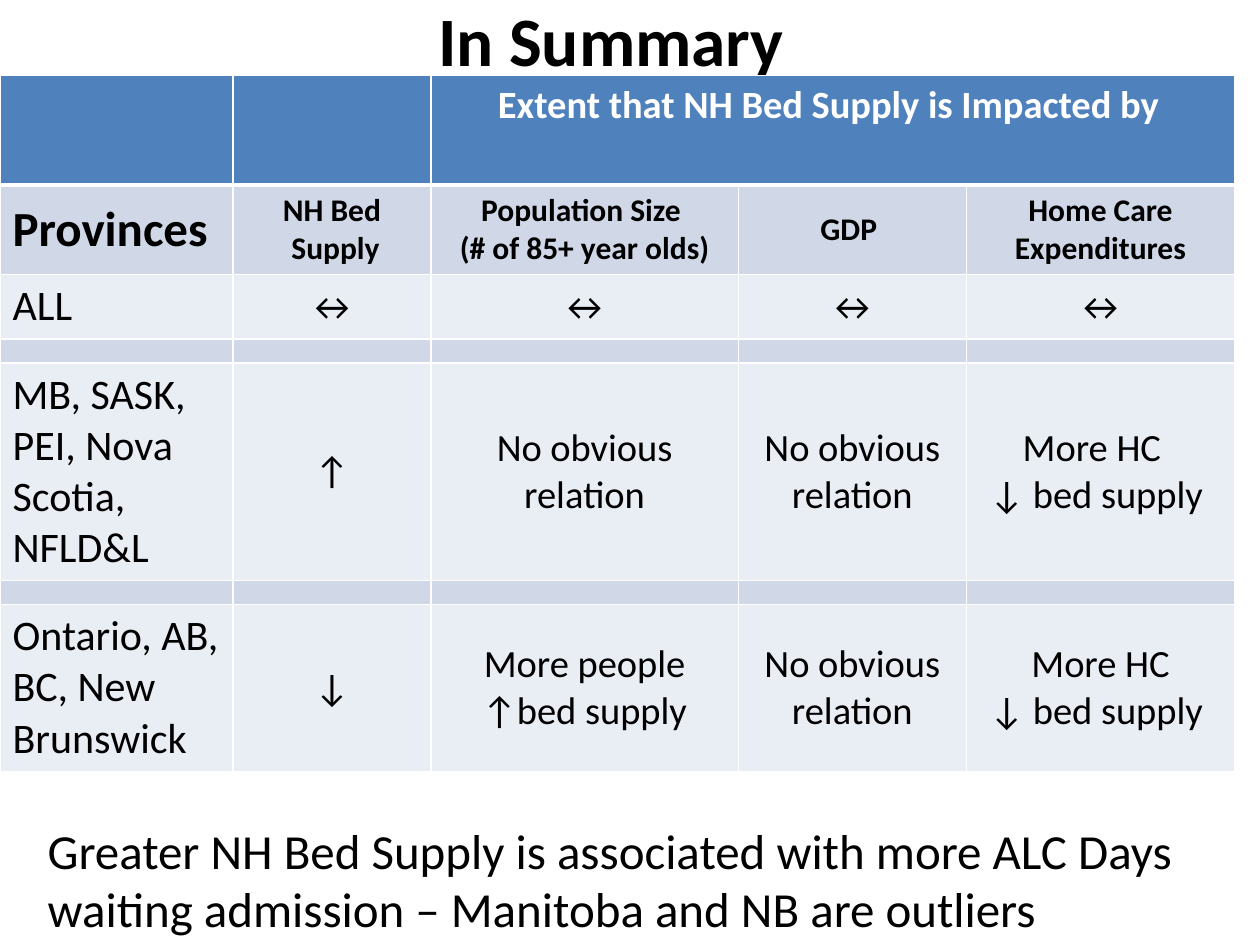
"""Build the nursing home bed supply summary slide."""
from lxml.etree import SubElement
from pptx import Presentation
from pptx.dml.color import RGBColor
from pptx.enum.text import MSO_ANCHOR as Anchor, PP_ALIGN as Align
from pptx.oxml.ns import qn
from pptx.util import Inches, Pt

FONT = "Calibri"
BLACK = RGBColor(0x00, 0x00, 0x00)
WHITE = RGBColor(0xFF, 0xFF, 0xFF)
HEADER_BLUE = RGBColor(0x4F, 0x81, 0xBD)
BAND_DARK = RGBColor(0xD0, 0xD8, 0xE8)
BAND_LIGHT = RGBColor(0xE9, 0xED, 0xF4)

TITLE = "In Summary"
CONCLUSION = ("Greater NH Bed Supply is associated with more ALC Days "
              "waiting admission – Manitoba and NB are outliers")
NO_RELATION = "No obvious\nrelation"
SPACER = [""] * 5
ROWS = [
    ["", "", "Extent that NH Bed Supply is Impacted by ", "", ""],
    ["Provinces", "NH Bed\n Supply", "Population Size \n(# of 85+ year olds)",
     "GDP ", "Home Care Expenditures"],
    ["ALL"] + ["↔"] * 4,
    SPACER,
    ["MB, SASK, PEI, Nova Scotia, NFLD&L", "↑", NO_RELATION, NO_RELATION,
     "More HC  \n↓ bed supply "],
    SPACER,
    ["Ontario, AB, BC, New Brunswick", "↓", "More people\n↑bed supply",
     NO_RELATION, "More HC\n↓ bed supply "],
]
COLUMN_WIDTHS = [1.85, 1.57, 2.44, 1.81, 2.13]
ROW_HEIGHTS = [0.87, 0.71, 0.51, 0.19, 1.72, 0.19, 1.33]
HEADER_SIZES = {0: (22, 22), 1: (28, 18)}
BODY_SIZES = (24, 22)
SPACER_SIZE = 5


def write_text(frame, text, size, color=BLACK, bold=False, align=Align.LEFT):
    for index, line in enumerate(text.split("\n")):
        paragraph = frame.add_paragraph() if index else frame.paragraphs[0]
        paragraph.alignment = align
        run = paragraph.add_run()
        run.text = line
        run.font.name = FONT
        run.font.size = Pt(size)
        run.font.bold = bold
        run.font.color.rgb = color


def set_borders(cell, bottom_width):
    properties = cell._tc.get_or_add_tcPr()
    for side, width in (("L", 1), ("R", 1), ("T", 1), ("B", bottom_width)):
        line = SubElement(properties, qn(f"a:ln{side}"), w=str(Pt(width)))
        fill = SubElement(line, qn("a:solidFill"))
        SubElement(fill, qn("a:srgbClr"), val=str(WHITE))


def fill_cell(cell, text, row, column):
    is_header = row == 0
    set_borders(cell, 3 if is_header else 1)
    cell.fill.solid()
    band = BAND_DARK if row % 2 else BAND_LIGHT
    cell.fill.fore_color.rgb = HEADER_BLUE if is_header else band
    first_size, other_size = HEADER_SIZES.get(row, BODY_SIZES)
    if text:
        is_label = column == 0
        top = is_header or (is_label and row > 1)
        cell.vertical_anchor = Anchor.TOP if top else Anchor.MIDDLE
        write_text(cell.text_frame, text, first_size if is_label else other_size,
                   WHITE if is_header else BLACK, row < 2,
                   Align.LEFT if is_label else Align.CENTER)
    else:
        size = other_size if is_header else SPACER_SIZE
        SubElement(cell.text_frame.paragraphs[0]._p, qn("a:endParaRPr"),
                   sz=str(size * 100))


def add_summary_table(slide):
    table = slide.shapes.add_table(
        len(ROWS), len(COLUMN_WIDTHS), Inches(0), Inches(0.6),
        Inches(sum(COLUMN_WIDTHS)), Inches(sum(ROW_HEIGHTS))).table
    for column, width in zip(table.columns, COLUMN_WIDTHS):
        column.width = Inches(width)
    for row, height in zip(table.rows, ROW_HEIGHTS):
        row.height = Inches(height)
    for row, texts in enumerate(ROWS):
        for column, text in enumerate(texts):
            fill_cell(table.cell(row, column), text, row, column)
    table.cell(0, 2).merge(table.cell(0, 4))


def main():
    presentation = Presentation()
    presentation.slide_width, presentation.slide_height = Inches(10), Inches(7.5)
    slide = presentation.slides.add_slide(presentation.slide_layouts[5])

    title = slide.shapes.title
    title.left, title.top = Inches(0.35), Inches(0.04)
    title.width, title.height = Inches(9), Inches(0.54)
    title.text_frame.vertical_anchor = Anchor.MIDDLE
    write_text(title.text_frame, TITLE, 39.6, bold=True, align=Align.CENTER)

    add_summary_table(slide)

    conclusion = slide.shapes.add_textbox(
        Inches(0.28), Inches(6.46), Inches(9.45), Inches(1.04))
    conclusion.text_frame.word_wrap = True
    write_text(conclusion.text_frame, CONCLUSION, 28)
    presentation.save("out.pptx")


if __name__ == "__main__":
    main()
